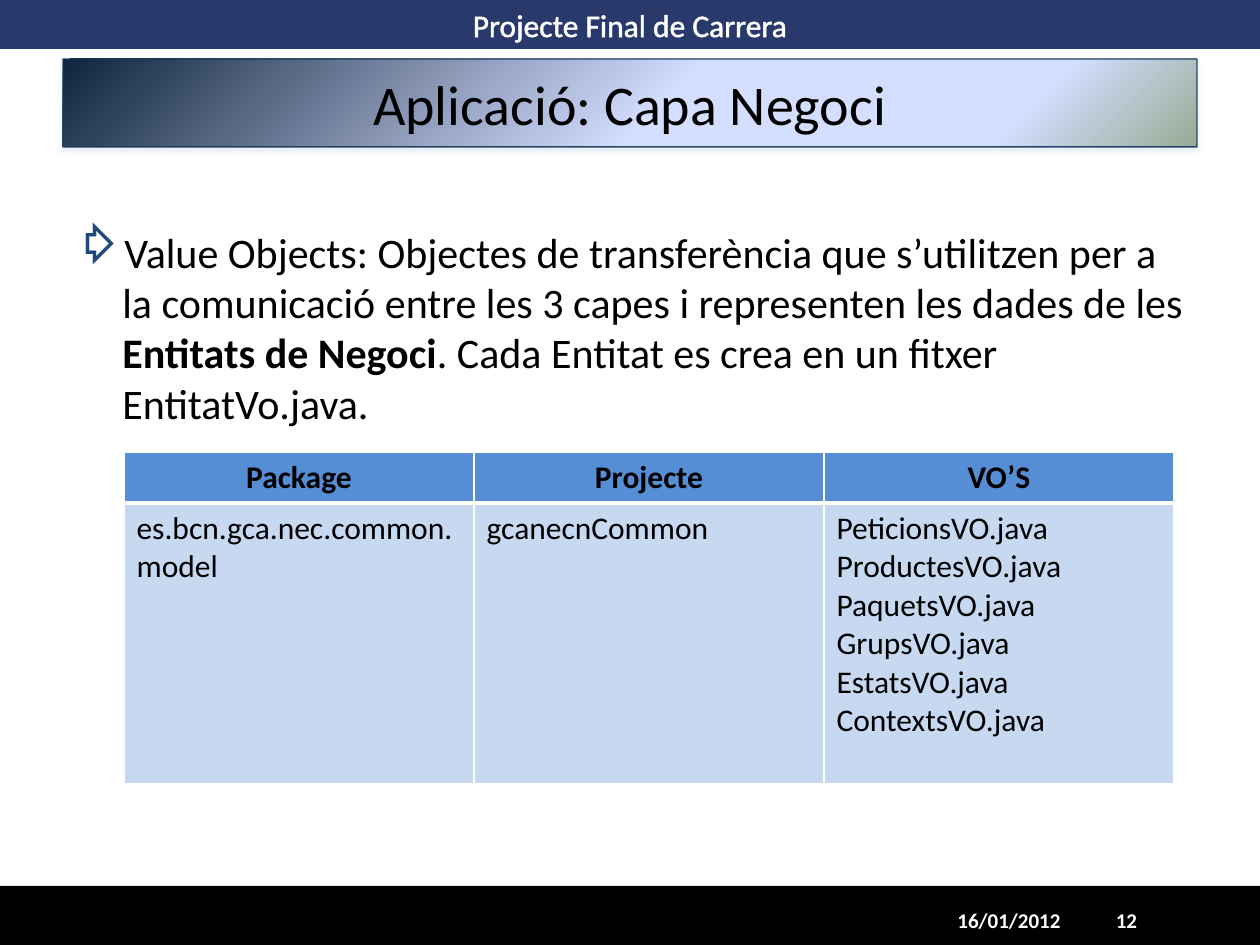
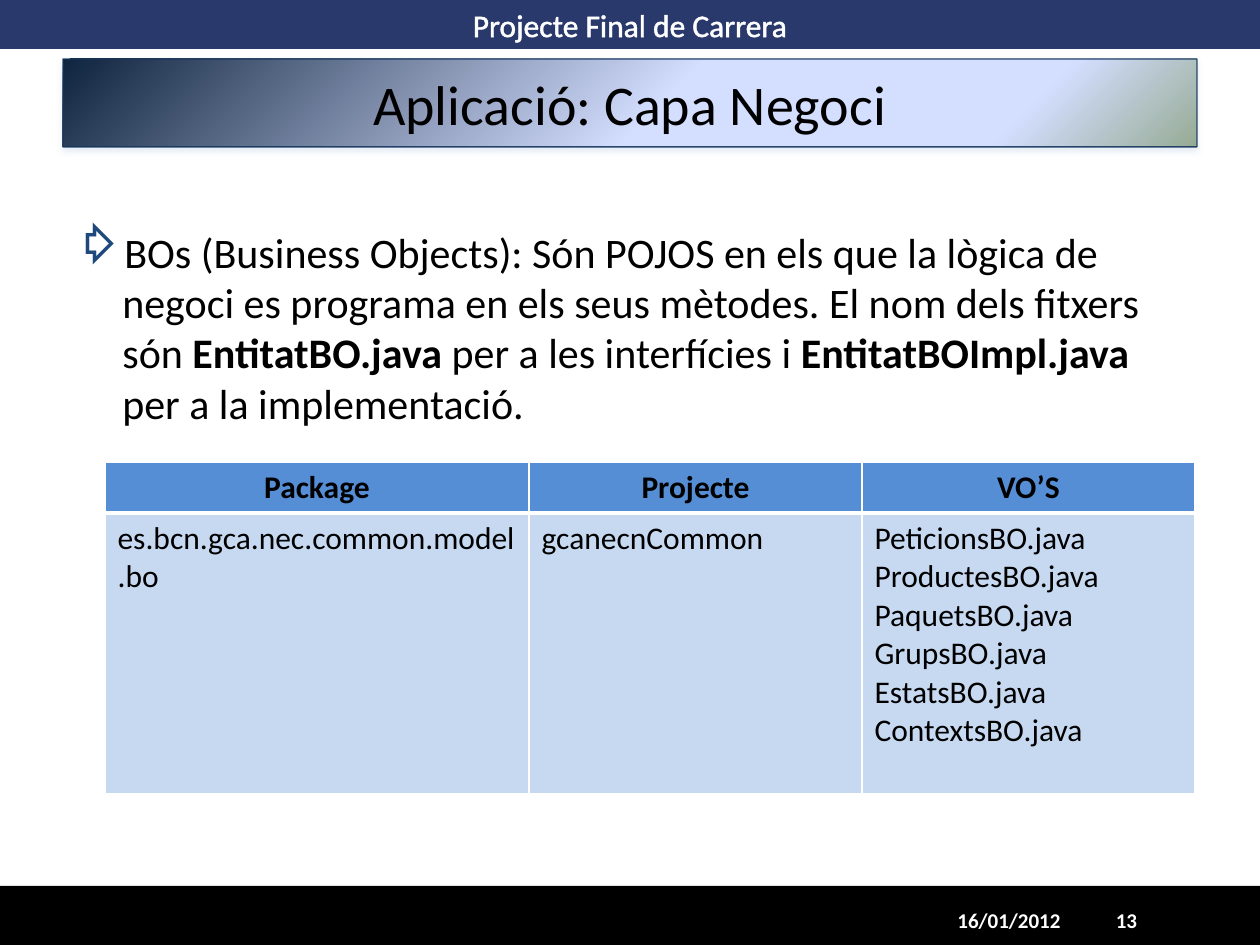
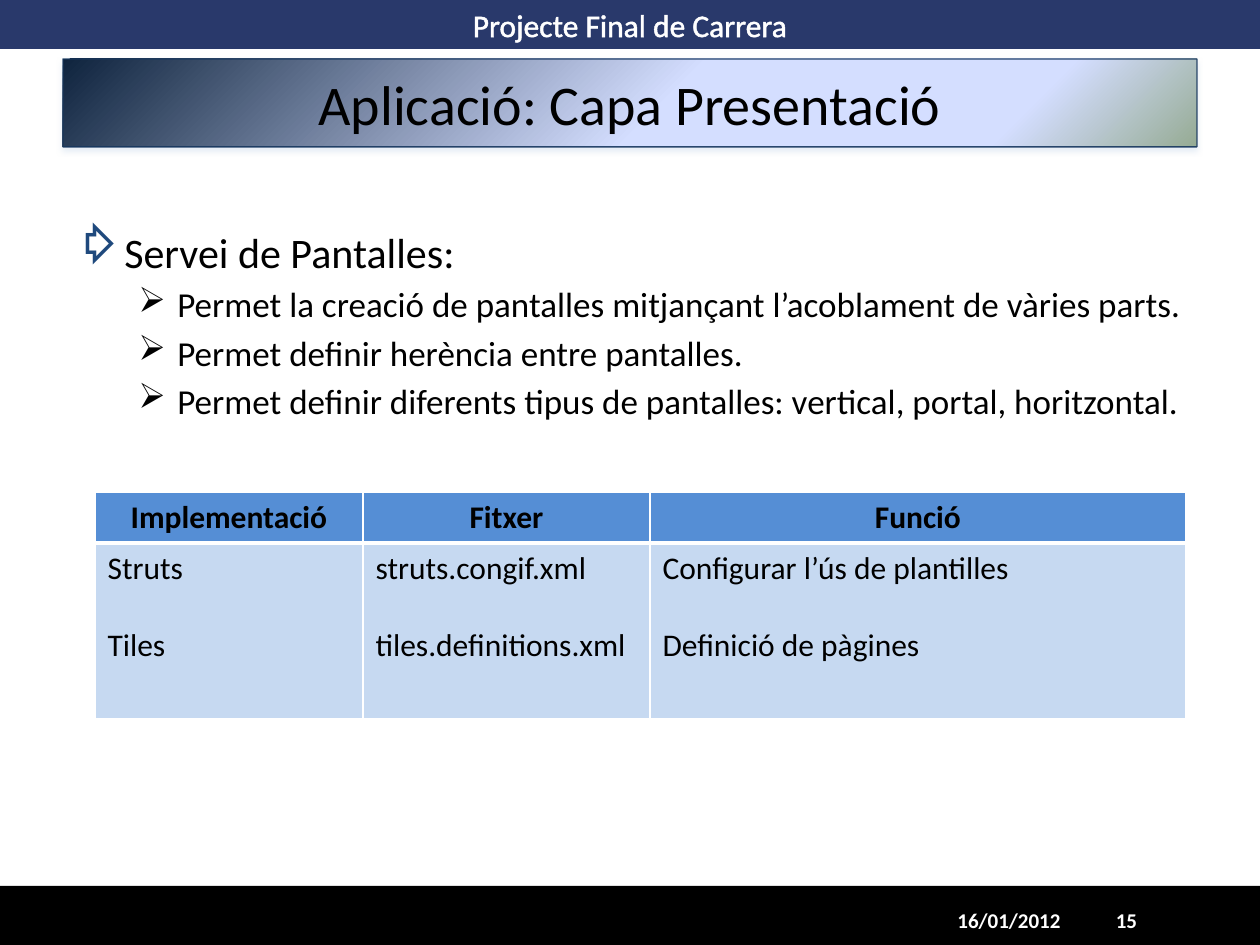
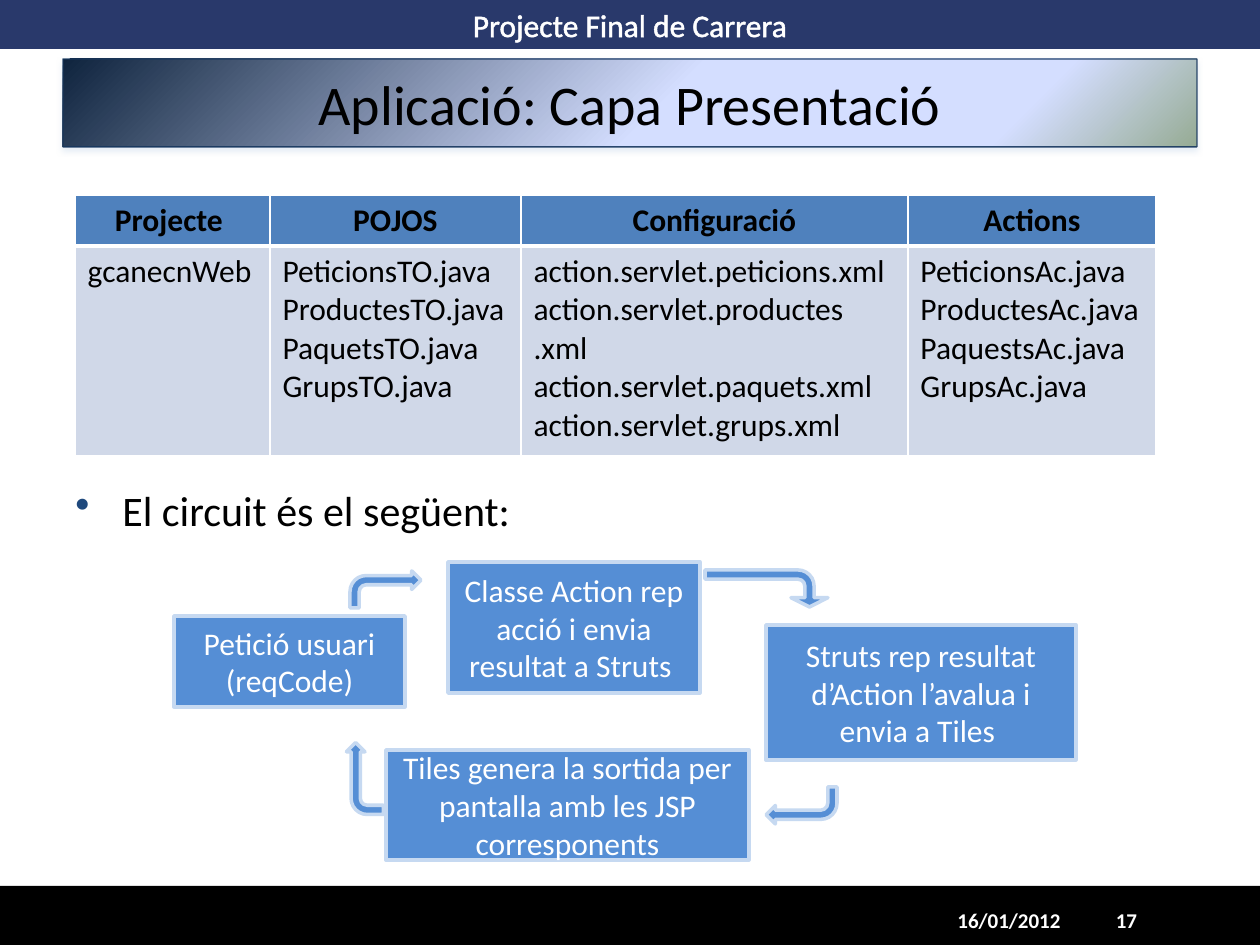
"""Builds four slides on the business and presentation layers of a final degree project."""
from lxml import etree
from pptx import Presentation
from pptx import util as u
from pptx.dml.color import RGBColor
from pptx.enum import shapes, text
from pptx.oxml.ns import qn

PX = 7257
FONT = "Calibri"
NAVY, BLACK, WHITE, BLUE, PALE = "29396B", "000000", "FFFFFF", "558ED5", "C6D9F1"
TITLE_EDGE, TITLE_SHADOW, BULLET = "17375E", "B9CDE5", "1F497D"
TITLE_STOPS = [(0, "0F243E"), (53, "D4DEFF"), (83, "D4DEFF"), (100, "96AB94")]
RECT, BENT = shapes.MSO_SHAPE.RECTANGLE, shapes.MSO_SHAPE.BENT_ARROW
CENTER, MIDDLE = text.PP_ALIGN.CENTER, text.MSO_ANCHOR.MIDDLE
rgb = RGBColor.from_string


def child(parent, tag, **attributes):
    return etree.SubElement(parent, qn(tag), attributes)


def write(paragraph, words, size, color=BLACK, bold=False):
    run = paragraph.add_run()
    run.text = words
    run.font.name, run.font.size, run.font.bold = FONT, u.Pt(size), bold
    run.font.color.rgb = rgb(color)
    return run


bands = [
    ((0, 0, 1260, 49), NAVY, ["Projecte Final de Carrera"]),
    ((0, 886, 1260, 59), BLACK, []),
]
steps = [
    ((174, 616, 231, 91), ["Petició usuari", "(reqCode)"]),
    ((448, 562, 252, 131), ["Classe Action rep acció i envia resultat a Struts "]),
    ((766, 625, 310, 135), ["Struts rep resultat d’Action l’avalua i envia a Tiles "]),
    ((386, 750, 363, 110), ["Tiles genera la sortida per pantalla amb les JSP corresponents"]),
]
turns = [
    ((350, 571, 71, 37), 0, 0.25),
    ((748, 527, 37, 123), 90, 0.5),
    ((766, 787, 71, 37), 180, 0.25),
    ((329, 760, 72, 37), 270, 0.25),
]
entities = ["Peticions", "Productes", "Paquets", "Grups", "Estats", "Contexts"]

pages = [
    dict(
        number="12", title="Aplicació: Capa Negoci", body=(220, 606),
        points=[("⇨", [
            "Value Objects: Objectes de transferència que s’utilitzen per a la comunicació "
            "entre les 3 capes i representen les dades de les ",
            "Entitats de Negoci",
            ". Cada Entitat es crea en un fitxer EntitatVo.java."])],
        corner=(124, 452), columns=[350, 350, 350], rows=[51, 281], fills=[BLUE, PALE], gap=0,
        cells=[["Package", "Projecte", "VO’S"],
               [["es.bcn.gca.nec.common.model"], ["gcanecnCommon"],
                [f"{entity}VO.java" for entity in entities]]],
        steps=[], turns=[]),
    dict(
        number="13", title="Aplicació: Capa Negoci", body=(220, 606),
        points=[("⇨", [
            "BOs (Business Objects): Són POJOS en els que la lògica de negoci es programa "
            "en els seus mètodes. El nom dels fitxers són ",
            "EntitatBO.java", " per a les interfícies i ",
            "EntitatBOImpl.java", " per a la implementació."])],
        corner=(105, 462), columns=[424, 333, 333], rows=[51, 281], fills=[BLUE, PALE], gap=0,
        cells=[["Package", "Projecte", "VO’S"],
               [["es.bcn.gca.nec.common.model.bo"], ["gcanecnCommon"],
                [f"{entity}BO.java" for entity in entities]]],
        steps=[], turns=[]),
    dict(
        number="15", title="Aplicació: Capa Presentació", body=(220, 606),
        points=[
            ("⇨", ["Servei de Pantalles:"]),
            ("➢", ["Permet la creació de pantalles mitjançant l’acoblament de vàries parts."]),
            ("➢", ["Permet definir herència entre pantalles."]),
            ("➢", ["Permet definir diferents tipus de pantalles: vertical, portal, horitzontal."])],
        corner=(95, 492), columns=[268, 287, 536], rows=[51, 176], fills=[BLUE, PALE], gap=22,
        cells=[["Implementació", "Fitxer", "Funció"],
               [["Struts", "Tiles"], ["struts.congif.xml", "tiles.definitions.xml"],
                ["Configurar l’ús de plantilles", "Definició de pàgines"]]],
        steps=[], turns=[]),
    dict(
        number="17", title="Aplicació: Capa Presentació", body=(478, 64),
        points=[("•", ["El circuit és el següent:"])],
        corner=(75, 195), columns=[195, 251, 387, 248], rows=[51, 210],
        fills=["4F81BD", "D0D8E8"], gap=0,
        cells=[["Projecte ", "POJOS", "Configuració", "Actions"],
               [["gcanecnWeb"],
                [f"{entity}TO.java" for entity in entities[:4]],
                ["action.servlet.peticions.xml", "action.servlet.productes", ".xml",
                 "action.servlet.paquets.xml", "action.servlet.grups.xml"],
                ["PeticionsAc.java", "ProductesAc.java", "PaquestsAc.java", "GrupsAc.java"]]],
        steps=steps, turns=turns),
]

deck = Presentation()
deck.slide_width, deck.slide_height = u.Inches(10), u.Inches(7.5)

for page in pages:
    slide = deck.slides.add_slide(deck.slide_layouts[6])

    blocks = [(RECT, box, fill, None, 0, words, 18, WHITE) for box, fill, words in bands]
    blocks.append((RECT, (63, 59, 1134, 88), PALE, TITLE_EDGE, 0, [page["title"]], 32, BLACK))
    blocks += [(RECT, box, BLUE, PALE, 0, words, 18, WHITE) for box, words in page["steps"]]
    blocks += [(BENT, box, BLUE, PALE, turn, [], 18, WHITE) for box, turn, head in page["turns"]]
    drawn = []
    for preset, box, fill, edge, turn, lines, size, color in blocks:
        block = slide.shapes.add_shape(preset, *(n * PX for n in box))
        block.shadow.inherit = False
        block.rotation = turn
        block.fill.solid()
        block.fill.fore_color.rgb = rgb(fill)
        if edge:
            block.line.color.rgb = rgb(edge)
            block.line.width = u.Pt(2)
        else:
            block.line.fill.background()
        frame = block.text_frame
        frame.word_wrap, frame.vertical_anchor = True, MIDDLE
        for row, words in enumerate(lines):
            paragraph = frame.add_paragraph() if row else frame.paragraphs[0]
            paragraph.alignment = CENTER
            write(paragraph, words, size, color)
        drawn.append(block)

    heading, title = drawn[0], drawn[2]
    letters = heading.text_frame.paragraphs[0].runs[0].font._element
    outline = child(letters, "a:ln", w="18415")
    child(child(outline, "a:solidFill"), "a:srgbClr", val=WHITE)
    letters.insert(0, outline)

    title.line.width = u.Pt(0.75)
    title.fill.gradient()
    title.fill.gradient_angle = 315
    look = title._element.spPr
    stops = look.find(".//" + qn("a:gsLst"))
    stops.clear()
    for place, color in TITLE_STOPS:
        child(child(stops, "a:gs", pos=str(place * 1000)), "a:srgbClr", val=color)
    child(look.find(qn("a:ln")).find(".//" + qn("a:srgbClr")), "a:alpha", val="90000")
    shade = child(look.find(qn("a:effectLst")), "a:outerShdw", blurRad=str(u.Pt(3.1)),
                  dist=str(u.Pt(1.8)), dir="5400000", rotWithShape="0")
    child(child(shade, "a:srgbClr", val=TITLE_SHADOW), "a:alpha", val="35000")

    for arrow, (box, turn, head) in zip(drawn[3 + len(page["steps"]):], page["turns"]):
        arrow.adjustments[1] = head

    top, height = page["body"]
    body = slide.shapes.add_textbox(63 * PX, top * PX, 1134 * PX, height * PX).text_frame
    body.word_wrap = True
    for row, (mark, runs) in enumerate(page["points"]):
        paragraph = body.add_paragraph() if row else body.paragraphs[0]
        nested = mark == "➢"
        paragraph.level = int(nested)
        margin, hang = (102, 39) if nested else (47, 47)
        layout = paragraph._p.get_or_add_pPr()
        layout.set("marL", str(margin * PX))
        layout.set("indent", str(-hang * PX))
        if not nested:
            child(child(layout, "a:buClr"), "a:srgbClr", val=BULLET)
        child(layout, "a:buChar", char=mark)
        if row:
            paragraph.space_before = u.Pt(3.6)
        for place, words in enumerate(runs):
            write(paragraph, words, 20 if nested else 24, bold=place % 2 == 1)

    for box, words in [((936, 895, 146, 50), "16/01/2012"), ((1092, 895, 69, 50), page["number"])]:
        footer = slide.shapes.add_textbox(*(n * PX for n in box)).text_frame
        footer.word_wrap, footer.vertical_anchor = True, MIDDLE
        footer.paragraphs[0].alignment = CENTER
        write(footer.paragraphs[0], words, 12, WHITE, True)

    columns, rows = page["columns"], page["rows"]
    left, top = page["corner"]
    grid = slide.shapes.add_table(len(rows), len(columns), left * PX, top * PX,
                                  sum(columns) * PX, sum(rows) * PX).table
    grid.horz_banding = False
    for column, width in zip(grid.columns, columns):
        column.width = width * PX
    for r, height in enumerate(rows):
        grid.rows[r].height = height * PX
        for c, content in enumerate(page["cells"][r]):
            cell = grid.cell(r, c)
            edges = cell._tc.get_or_add_tcPr()
            for side in "LRTB":
                thick = side == ("T" if r else "B")
                border = child(edges, f"a:ln{side}", w=str(u.Pt(3 if thick else 1)))
                child(child(border, "a:solidFill"), "a:srgbClr", val=WHITE)
            cell.fill.solid()
            cell.fill.fore_color.rgb = rgb(page["fills"][r])
            for line, words in enumerate(content if r else [content]):
                frame = cell.text_frame
                paragraph = frame.add_paragraph() if line else frame.paragraphs[0]
                if r == 0:
                    paragraph.alignment = CENTER
                if line and page["gap"]:
                    paragraph.space_before = u.Pt(page["gap"])
                write(paragraph, words, 18, bold=r == 0)

deck.save("out.pptx")
